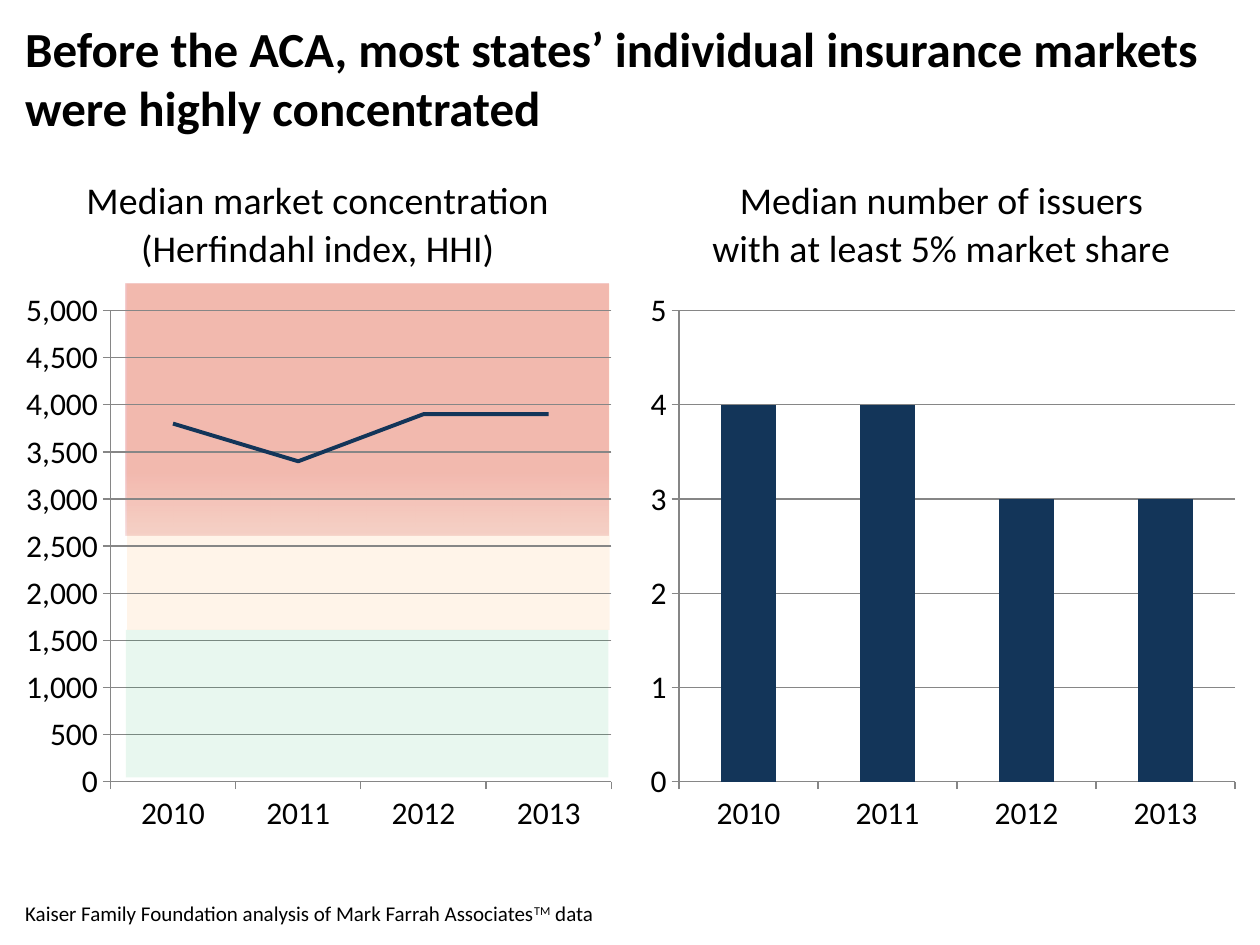
"""Build a slide on insurance market concentration with two charts and shaded HHI bands."""
from dataclasses import dataclass
from typing import Optional

from lxml import etree
from pptx import Presentation
from pptx.chart.data import CategoryChartData
from pptx.dml.color import RGBColor
from pptx.enum.chart import XL_CHART_TYPE, XL_TICK_MARK
from pptx.enum.shapes import MSO_SHAPE
from pptx.enum.text import MSO_ANCHOR, MSO_AUTO_SIZE, PP_ALIGN
from pptx.oxml import parse_xml
from pptx.oxml.ns import nsdecls, qn
from pptx.util import Inches, Pt

LINE, COLUMN = XL_CHART_TYPE.LINE, XL_CHART_TYPE.COLUMN_CLUSTERED
OUTSIDE, RECT = XL_TICK_MARK.OUTSIDE, MSO_SHAPE.RECTANGLE
TOP, BOTTOM = MSO_ANCHOR.TOP, MSO_ANCHOR.BOTTOM
LEFT, NO_FIT = PP_ALIGN.LEFT, MSO_AUTO_SIZE.NONE

FONT = "Calibri"
COLORS = {"text": "000000", "series": "133559", "grid": "868686",
          "orange": "FF8811", "green": "00B050",
          "red": "E98F8F", "pink": "EFBCBC", "blush": "F7DEDE"}
SLIDE_W, SLIDE_H, MARGIN = 10, 7.5, 0.1
YEARS = ("2010", "2011", "2012", "2013")
CHART_TOP, CHART_W, CHART_H = 1.2, 4.85, 5.5
PLOT_Y, PLOT_H = 0.23, 0.68
BAND_LEFT, BAND_W = 1, 3.83


@dataclass
class Stop:
    """Gradient stop: position and opacity in percent."""
    pos: int
    color: str
    alpha: int


@dataclass
class Band:
    """Shaded HHI zone."""
    left: float
    top: float
    height: float
    stops: tuple[Stop, ...]


@dataclass
class Panel:
    """Chart with its plot area given as shares of the chart width."""
    kind: int
    left: float
    title: str
    values: tuple[int, ...]
    major: int
    maximum: int
    number_format: str
    plot_x: float
    plot_w: float
    gap: Optional[int] = None


RED = Band(BAND_LEFT, 2.25, 2,
           (Stop(75, "red", 56), Stop(97, "pink", 60), Stop(100, "blush", 100)))
ORANGE = Band(BAND_LEFT + 0.01, 2.25, 2.75, (Stop(0, "orange", 9),))
GREEN = Band(BAND_LEFT, 5, 1.17, (Stop(0, "green", 9),))
PANELS = (
    Panel(LINE, MARGIN, "Median market concentration\n(Herfindahl index, HHI)",
          (3800, 3400, 3900, 3900), 500, 5000, "#,##0", 0.16, 0.82),
    Panel(COLUMN, SLIDE_W - MARGIN - CHART_W,
          "Median number of issuers\nwith at least 5% market share",
          (4, 4, 3, 3), 1, 5, "General", 0.07, 0.91, 150),
)


def rgb(name: str) -> RGBColor:
    """Look up a named colour."""
    return RGBColor.from_string(COLORS[name])


def style_font(font, size: float, bold: bool = False) -> None:
    """Apply the slide's typeface."""
    font.name, font.size, font.bold = FONT, Pt(size), bold
    font.color.rgb = rgb("text")


def color_xml(stop: Stop) -> str:
    """Return a colour element with opacity."""
    return (f'<a:srgbClr val="{COLORS[stop.color]}">'
            f'<a:alpha val="{stop.alpha * 1000}"/></a:srgbClr>')


def add_band(s, band: Band) -> None:
    """Draw a translucent zone in one colour or a vertical gradient."""
    sp = s.shapes.add_shape(RECT, Inches(band.left), Inches(band.top),
                            Inches(BAND_W), Inches(band.height))
    sp.shadow.inherit = False
    sp.line.fill.background()
    ns = nsdecls("a")
    if len(band.stops) == 1:
        xml = f"<a:solidFill {ns}>{color_xml(band.stops[0])}</a:solidFill>"
    else:
        stops = "".join(f'<a:gs pos="{g.pos * 1000}">{color_xml(g)}</a:gs>'
                        for g in band.stops)
        xml = (f'<a:gradFill {ns} rotWithShape="1"><a:gsLst>{stops}</a:gsLst>'
               '<a:lin ang="5400000" scaled="0"/></a:gradFill>')
    sp.element.spPr.find(qn("a:prstGeom")).addnext(parse_xml(xml))


def clear_fill() -> etree.ElementBase:
    """Return chart properties with neither fill nor line."""
    return parse_xml(f'<c:spPr {nsdecls("c", "a")}><a:noFill/>'
                     '<a:ln><a:noFill/></a:ln></c:spPr>')


def place_plot(chart, panel: Panel) -> None:
    """Fix the inner plot area and make the chart transparent."""
    root = chart._chartSpace.find(qn("c:chart"))
    root.addnext(clear_fill())
    plot = root.find(qn("c:plotArea"))
    for old in plot.findall(qn("c:layout")):
        plot.remove(old)
    box = {"x": panel.plot_x, "y": PLOT_Y, "w": panel.plot_w, "h": PLOT_H}
    items = "".join(f'<c:{k} val="{v}"/>' for k, v in box.items())
    plot.insert(0, parse_xml(
        f'<c:layout {nsdecls("c")}><c:manualLayout><c:layoutTarget val="inner"/>'
        '<c:xMode val="edge"/><c:yMode val="edge"/>'
        f'{items}</c:manualLayout></c:layout>'))
    plot.append(clear_fill())


def add_panel(s, panel: Panel) -> None:
    """Add one titled chart."""
    data = CategoryChartData(number_format=panel.number_format)
    data.categories = YEARS
    data.add_series("Series 1", panel.values)
    chart = s.shapes.add_chart(panel.kind, Inches(panel.left), Inches(CHART_TOP),
                               Inches(CHART_W), Inches(CHART_H), data).chart
    chart.has_legend = False
    style_font(chart.font, 18)
    tf = chart.chart_title.text_frame
    tf.text = panel.title
    chart.chart_title.include_in_layout = False
    for p in tf.paragraphs:
        style_font(p.runs[0].font, 21.6)

    value_axis = chart.value_axis
    value_axis.minimum_scale, value_axis.maximum_scale = 0, panel.maximum
    value_axis.major_unit = panel.major
    value_axis.tick_labels.number_format = panel.number_format
    value_axis.tick_labels.number_format_is_linked = False
    value_axis.has_major_gridlines = True
    for axis in (chart.category_axis, value_axis):
        axis.major_tick_mark = OUTSIDE
    for item in (chart.category_axis, value_axis, value_axis.major_gridlines):
        item.format.line.color.rgb = rgb("grid")
        item.format.line.width = Pt(0.75)

    plot = chart.plots[0]
    plot.vary_by_categories = False
    series = plot.series[0]
    if panel.gap is None:
        series.smooth = False
        series.format.line.color.rgb = rgb("series")
        series.format.line.width = Pt(2.25)
    else:
        plot.gap_width = panel.gap
        series.format.fill.solid()
        series.format.fill.fore_color.rgb = rgb("series")
    place_plot(chart, panel)


def fill_placeholder(sp, top: float, width: float, height: float, anchor: int,
                     parts: tuple[str, ...], size: float, bold: bool = False) -> None:
    """Move a placeholder and write one left-aligned paragraph of runs."""
    sp.left, sp.top = Inches(MARGIN), Inches(top)
    sp.width, sp.height = Inches(width), Inches(height)
    tf = sp.text_frame
    tf.word_wrap, tf.auto_size, tf.vertical_anchor = True, NO_FIT, anchor
    p = tf.paragraphs[0]
    p.alignment, p.space_before = LEFT, Pt(0)
    pPr = p._p.get_or_add_pPr()
    pPr.set("marL", "0")
    pPr.set("indent", "0")
    etree.SubElement(pPr, qn("a:buNone"))
    for text in parts:
        r = p.add_run()
        r.text = text
        style_font(r.font, size, bold)
        if text == "TM":
            r.font._element.set("baseline", "30000")


def main() -> None:
    """Assemble and save the slide."""
    prs = Presentation()
    prs.slide_width, prs.slide_height = Inches(SLIDE_W), Inches(SLIDE_H)
    s = prs.slides.add_slide(prs.slide_layouts[1])
    fill_placeholder(s.shapes.title, MARGIN, SLIDE_W - 2 * MARGIN, 1, TOP,
                     ("Before the ACA, most states’ individual insurance markets "
                      "were highly concentrated",), 28, True)
    fill_placeholder(s.placeholders[1], 6.8, 9.1, 0.6, BOTTOM,
                     ("Kaiser Family Foundation analysis of Mark Farrah Associates",
                      "TM", " data"), 12)
    for band in (RED, ORANGE):
        add_band(s, band)
    for panel in PANELS:
        add_panel(s, panel)
    add_band(s, GREEN)
    prs.save("out.pptx")


if __name__ == "__main__":
    main()
